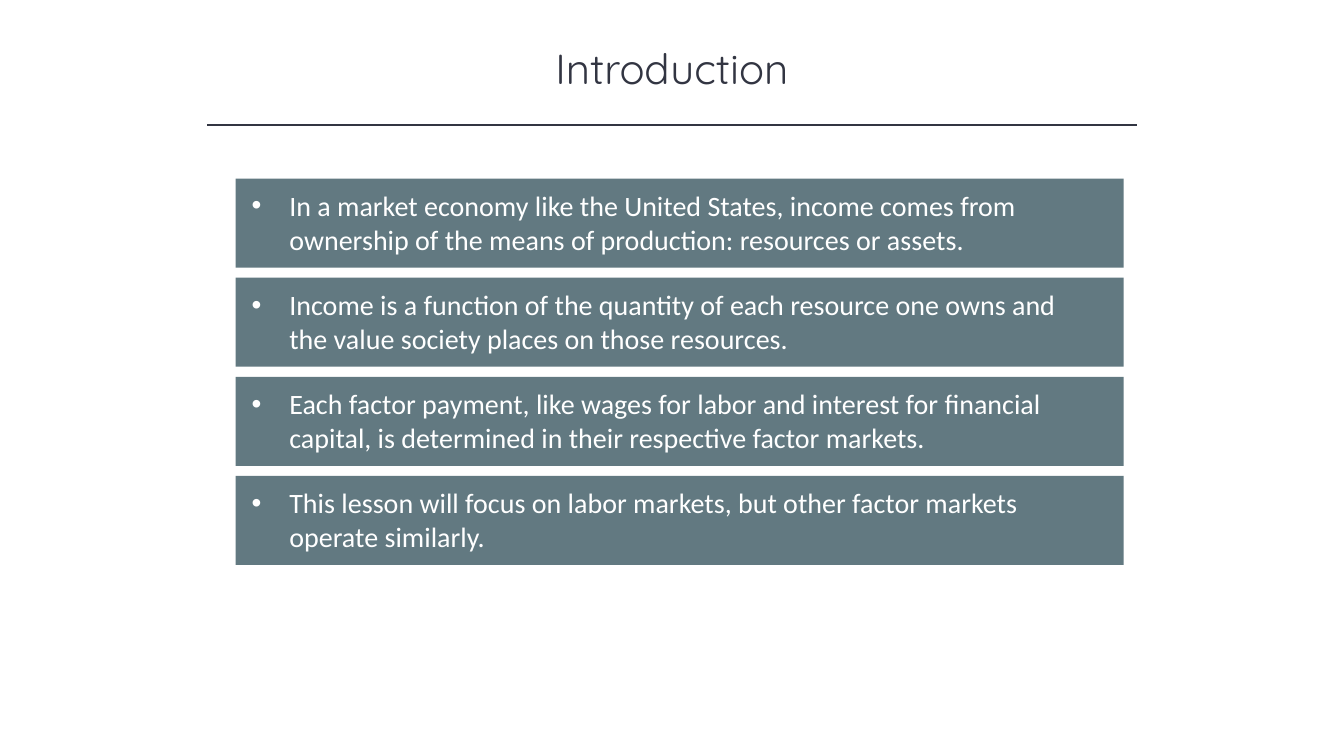
import pptx
import pptx.util
import pptx.dml.color
import pptx.enum.shapes
import pptx.enum.text
import lxml.etree
from pptx.oxml.ns import qn

Pt = pptx.util.Pt
INK, PANEL, WHITE = "323542", "627981", "FFFFFF"
POINTS = [
    "In a market economy like the United States, income comes from ownership of the means of production: resources or assets.",
    "Income is a function of the quantity of each resource one owns and the value society places on those resources.",
    "Each factor payment, like wages for labor and interest for financial capital, is determined in their respective factor markets.",
    "This lesson will focus on labor markets, but other factor markets operate similarly.",
]


def color(value):
    return pptx.dml.color.RGBColor.from_string(value)


def write(shape, text, font_name, size, text_color, alignment):
    frame = shape.text_frame
    frame.word_wrap = True
    frame.vertical_anchor = pptx.enum.text.MSO_ANCHOR.TOP
    paragraph = frame.paragraphs[0]
    paragraph.text = text
    paragraph.alignment = alignment
    paragraph.font.name = font_name
    paragraph.font.size = Pt(size)
    paragraph.font.color.rgb = color(text_color)
    return paragraph


def add_bullet(paragraph, indent):
    properties = paragraph._p.get_or_add_pPr()
    properties.set("marL", str(Pt(indent)))
    properties.set("indent", str(-Pt(indent)))
    font = lxml.etree.SubElement(properties, qn("a:buFont"))
    font.set("typeface", "Arial")
    lxml.etree.SubElement(properties, qn("a:buChar")).set("char", "•")


def add_rectangle(shapes, left, top, width, height):
    shape = shapes.add_shape(pptx.enum.shapes.MSO_SHAPE.RECTANGLE,
                             Pt(left), Pt(top), Pt(width), Pt(height))
    shape.shadow.inherit = False
    shape.fill.solid()
    shape.fill.fore_color.rgb = color(PANEL)
    shape.line.fill.background()
    return shape


def add_heading(slide, left, top, width, height):
    # Title
    title = slide.shapes.add_textbox(Pt(left), Pt(top), Pt(width), Pt(height))
    write(title, "Introduction", "Quicksand", 30, INK,
          pptx.enum.text.PP_ALIGN.CENTER)

    # Rule below the title
    rule_left, rule_width, rule_top = left + 28, 664, top + 62.6
    rule = slide.shapes.add_connector(
        pptx.enum.shapes.MSO_CONNECTOR.STRAIGHT,
        Pt(rule_left), Pt(rule_top), Pt(rule_left + rule_width), Pt(rule_top))
    rule.line.color.rgb = color(INK)
    rule.line.width = Pt(1)
    lxml.etree.SubElement(rule._element.spPr, qn("a:effectLst"))


def add_panel(slide, text, left, top, width, height):
    group = slide.shapes.add_group_shape()
    add_rectangle(group.shapes, left, top, width, height)
    label = add_rectangle(group.shapes, left + 4.3, top + 3.5,
                          width - 19.4, height - 8.2)
    paragraph = write(label, text, "Calibri", 20, WHITE,
                      pptx.enum.text.PP_ALIGN.LEFT)
    add_bullet(paragraph, 27)


def add_panels(slide, left, top, width, height, gap=7.2):
    panel_height = (height - gap * (len(POINTS) - 1)) / len(POINTS)
    for index, text in enumerate(POINTS):
        add_panel(slide, text, left, top + index * (panel_height + gap),
                  width, panel_height)


def main():
    presentation = pptx.Presentation()
    presentation.slide_width = Pt(960)
    presentation.slide_height = Pt(540)
    slide = presentation.slides.add_slide(presentation.slide_layouts[6])
    add_heading(slide, 120, 26.6, 720, 44)
    add_panels(slide, 168.3, 127.6, 634.4, 276)
    presentation.save("out.pptx")


if __name__ == "__main__":
    main()
